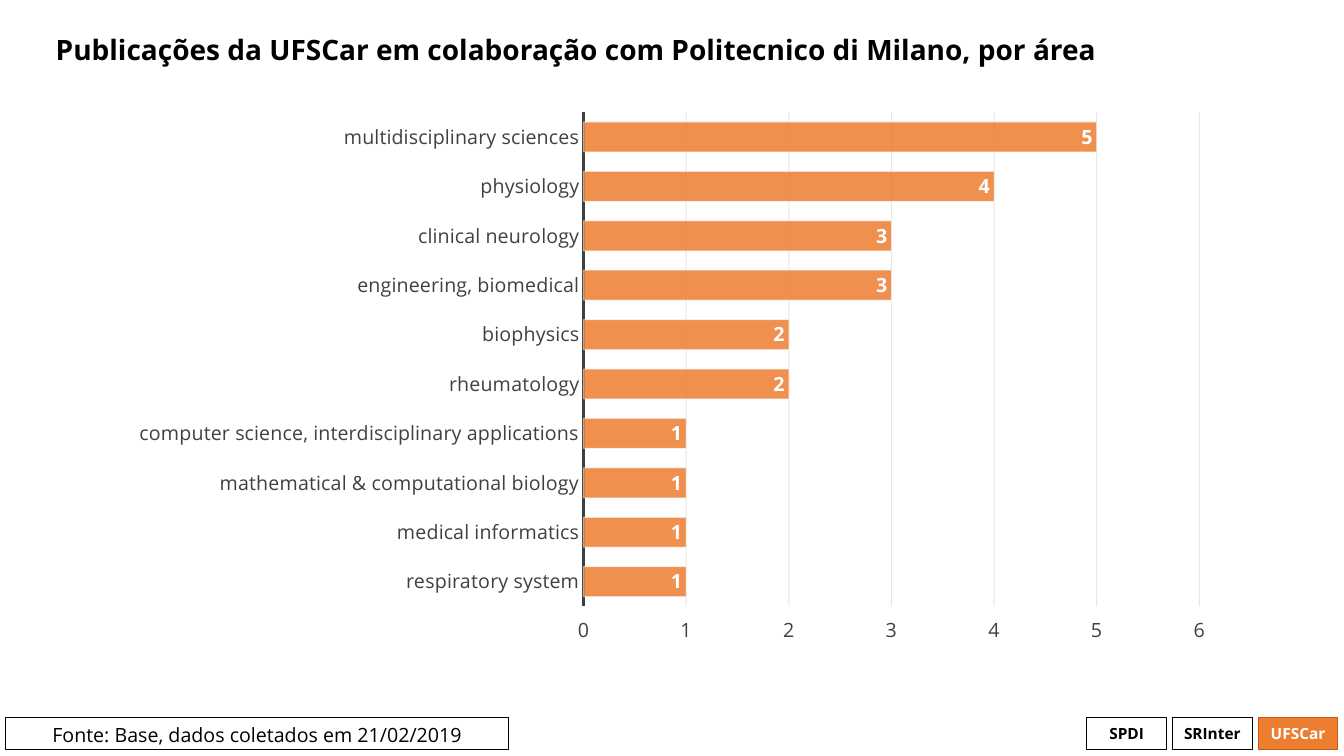
"""Build the slide of joint publications by subject area."""
from lxml.etree import SubElement
from pptx import Presentation
from pptx.chart.data import CategoryChartData
from pptx.dml.color import RGBColor
from pptx.enum.chart import XL_CHART_TYPE as ChartType
from pptx.enum.chart import XL_LABEL_POSITION as LabelPosition
from pptx.enum.chart import XL_TICK_LABEL_POSITION as TickLabelPosition
from pptx.enum.chart import XL_TICK_MARK as TickMark
from pptx.enum.shapes import MSO_SHAPE as Preset
from pptx.enum.text import MSO_ANCHOR as Anchor
from pptx.enum.text import MSO_AUTO_SIZE as AutoSize
from pptx.enum.text import PP_ALIGN as Align
from pptx.oxml import parse_xml
from pptx.oxml.ns import nsdecls, qn
from pptx.util import Cm, Pt

COLORS = {
    "black": "000000",
    "white": "FFFFFF",
    "orange": "ED7D31",
    "dark orange": "C55A11",
    "axis": "404040",
    "grid": "0D0D0D",
}
AREAS = {
    "multidisciplinary sciences": 5,
    "physiology": 4,
    "clinical neurology": 3,
    "engineering, biomedical": 3,
    "biophysics": 2,
    "rheumatology": 2,
    "computer science, interdisciplinary applications": 1,
    "mathematical & computational biology": 1,
    "medical informatics": 1,
    "respiratory system": 1,
}
TAG_LEFT, TAG_STEP, TAG_WIDTH = 27.39, 2.16, 2.01
FOOTER = [
    ("SPDI", TAG_LEFT, TAG_WIDTH, None, "black", "black", 11, True, Anchor.MIDDLE),
    ("SRInter", TAG_LEFT + TAG_STEP, TAG_WIDTH, None, "black", "black", 11, True, Anchor.MIDDLE),
    ("UFSCar", TAG_LEFT + 2 * TAG_STEP, TAG_WIDTH, "orange", "dark orange", "white", 11, True, Anchor.MIDDLE),
    ("Fonte: Base, dados coletados em 21/02/2019", 0.15, 12.67, None, "black", "black", 14, False, Anchor.TOP),
]


def rgb(name):
    return RGBColor.from_string(COLORS[name])


def style_font(font, size, color, bold=False):
    values = {"name": "Open Sans", "size": Pt(size), "bold": bold}
    for attribute, value in values.items():
        setattr(font, attribute, value)
    font.color.rgb = rgb(color)


presentation = Presentation()
presentation.slide_width, presentation.slide_height = Cm(33.87), Cm(19.05)
slide = presentation.slides.add_slide(presentation.slide_layouts[5])

for text, left, width, fill, line, color, size, bold, anchor in FOOTER:
    shape = slide.shapes.add_shape(Preset.RECTANGLE, Cm(left), Cm(18.08), Cm(width), Cm(0.82))
    shape.shadow.inherit = False
    if fill:
        shape.fill.solid()
        shape.fill.fore_color.rgb = rgb(fill)
    else:
        shape.fill.background()
    shape.line.color.rgb = rgb(line)
    shape.line.width = Pt(0.75)
    frame = shape.text_frame
    frame.vertical_anchor = anchor
    paragraph = frame.paragraphs[0]
    paragraph.text = text
    paragraph.alignment = Align.CENTER
    style_font(paragraph.runs[0].font, size, color, bold)

title = slide.shapes.title
title_place = {"left": Cm(1.15), "top": Cm(0.15), "width": Cm(31.52), "height": Cm(2.31)}
for attribute, value in title_place.items():
    setattr(title, attribute, value)
frame = title.text_frame
frame.text = "Publicações da UFSCar em colaboração com Politecnico di Milano, por área"
frame.auto_size = AutoSize.NONE
frame.word_wrap = True
frame.vertical_anchor = Anchor.MIDDLE
paragraph = frame.paragraphs[0]
paragraph.alignment = Align.LEFT
paragraph.line_spacing = 0.9
style_font(paragraph.runs[0].font, 20, "black", True)

chart_data = CategoryChartData(number_format="General")
chart_data.categories = list(AREAS)
chart_data.add_series("Series 1", list(AREAS.values()))
chart = slide.shapes.add_chart(
    ChartType.BAR_CLUSTERED, Cm(2.92), Cm(2.51), Cm(27.99), Cm(14), chart_data
).chart
chart.has_legend = False
chart.has_title = False
style_font(chart.font, 14, "black")

category_axis, value_axis = chart.category_axis, chart.value_axis
for axis in (category_axis, value_axis):
    axis.major_tick_mark = axis.minor_tick_mark = TickMark.NONE
    style_font(axis.tick_labels.font, 14, "axis")
category_axis.reverse_order = True
category_axis.has_major_gridlines = False
category_axis.format.line.color.rgb = rgb("axis")
category_axis.format.line.width = Pt(1.5)
value_settings = {
    "minimum_scale": 0, "maximum_scale": 6, "major_unit": 1,
    "tick_label_position": TickLabelPosition.HIGH, "has_major_gridlines": True,
}
for attribute, value in value_settings.items():
    setattr(value_axis, attribute, value)
value_axis.format.line.fill.background()
grid_line = value_axis.major_gridlines.format.line
grid_line.color.rgb = rgb("grid")
grid_line.width = Pt(0.75)

plot = chart.plots[0]
plot.gap_width = 65
plot.vary_by_categories = False
series = plot.series[0]
series.format.fill.solid()
series.format.fill.fore_color.rgb = rgb("orange")
series.format.line.color.rgb = rgb("white")
series.format.line.width = Pt(0.75)
labels = series.data_labels
labels.show_value = True
labels.position = LabelPosition.INSIDE_END
style_font(labels.font, 14, "white", True)

chart_space = chart.element
OPACITY = {
    "//c:ser/c:spPr/a:solidFill/a:srgbClr": 85,
    "//c:ser/c:spPr/a:ln//a:srgbClr": 50,
    "//c:majorGridlines//a:srgbClr": 10,
}
for location, percent in OPACITY.items():
    for color in chart_space.xpath(location):
        SubElement(color, qn("a:alpha")).set("val", str(percent * 1000))

plot_area = chart_space.xpath("c:chart/c:plotArea")[0]
for layout in plot_area.findall(qn("c:layout")):
    plot_area.remove(layout)
layout = parse_xml(f"<c:layout {nsdecls('c')}><c:manualLayout/></c:layout>")
LAYOUT = {
    "layoutTarget": "inner", "xMode": "edge", "yMode": "edge",
    "x": "0.421", "y": "0.022", "w": "0.555", "h": "0.891",
}
for tag, value in LAYOUT.items():
    SubElement(layout[0], qn(f"c:{tag}")).set("val", value)
plot_area.insert(0, layout)

white_fill = f'<a:solidFill><a:srgbClr val="{COLORS["white"]}"/></a:solidFill>'
chart_space.find(qn("c:chart")).addnext(parse_xml(
    f'<c:spPr {nsdecls("c", "a")}>{white_fill}<a:ln w="{Pt(0.75)}">{white_fill}</a:ln></c:spPr>'
))

presentation.save("out.pptx")
